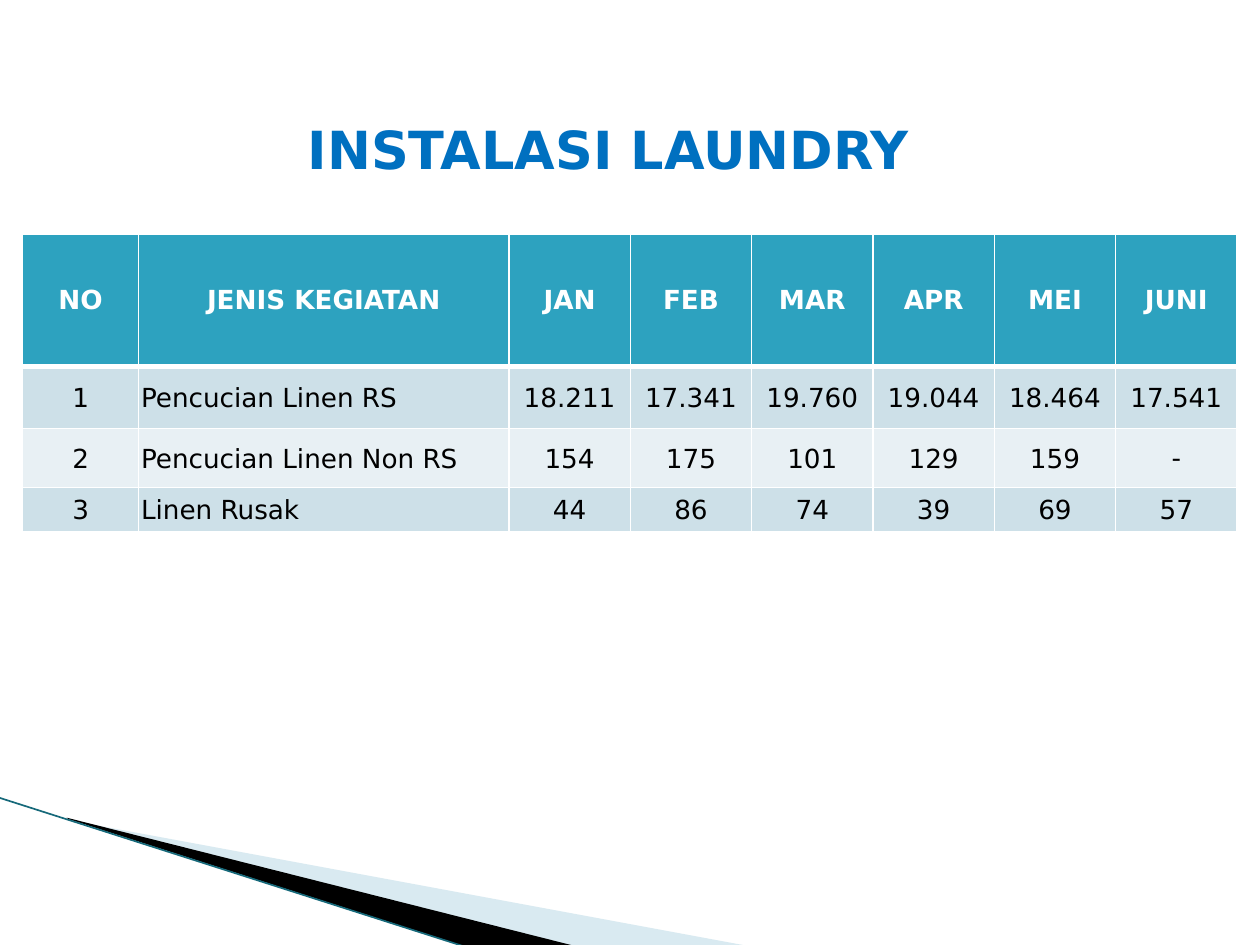
from lxml import etree
from pptx import Presentation
from pptx import util as u
from pptx.dml.color import RGBColor
from pptx.enum import shapes, text
from pptx.oxml import parse_xml
from pptx.oxml.ns import nsdecls, qn

FONT = "DejaVu Sans"
WHITE = RGBColor(0xFF, 0xFF, 0xFF)
BLACK = RGBColor(0, 0, 0)
BLUE = RGBColor(0x00, 0x70, 0xC0)
TEAL = RGBColor(0x2D, 0xA2, 0xBF)
DARK = RGBColor(0x16, 0x69, 0x7A)
PALE = RGBColor(0xA0, 0xCB, 0xDC)
ODD = RGBColor(0xCD, 0xE0, 0xE8)
EVEN = RGBColor(0xE8, 0xF0, 0xF4)


def style(para, size, color, bold, align):
    para.alignment = align
    font = para.font
    font.name, font.size, font.bold = FONT, u.Pt(size), bold
    font.color.rgb = color


def border(cell, side, width):
    cell._tc.get_or_add_tcPr().append(parse_xml(
        f'<a:{side} {nsdecls("a")} w="{u.Pt(width)}"><a:solidFill>'
        f'<a:srgbClr val="{WHITE}"/></a:solidFill></a:{side}>'))


deck = Presentation()
deck.slide_width, deck.slide_height = u.Inches(10), u.Inches(7.5)
slide = deck.slides.add_slide(deck.slide_layouts[6])

# Wedges in the lower left corner
wedges = [
    (PALE, [(0.55, 6.51), (5.95, 7.51), (4.56, 7.51), (0.55, 6.5)]),
    (BLACK, [(0.53, 6.49), (4.57, 7.51), (3.72, 7.52), (0.54, 6.5)]),
]
for color, points in wedges:
    start, *rest = [(u.Inches(x), u.Inches(y)) for x, y in points]
    path = slide.shapes.build_freeform(*start)
    path.add_line_segments(rest, close=True)
    wedge = path.convert_to_shape()
    wedge.shadow.inherit = False
    wedge.fill.solid()
    wedge.fill.fore_color.rgb = color
    wedge.line.fill.background()
    if color == PALE:
        tint = wedge._element.spPr.find(qn("a:solidFill"))[0]
        etree.SubElement(tint, qn("a:alpha")).set("val", "40000")

# Thin edge along the wedges
edge = slide.shapes.add_connector(
    shapes.MSO_CONNECTOR.STRAIGHT,
    u.Inches(-0.01), u.Inches(6.33), u.Inches(3.71), u.Inches(7.52))
edge.line.color.rgb = DARK
edge.line.width = u.Pt(0.95)
etree.SubElement(edge._element.spPr, qn("a:effectLst"))

# Table of monthly counts
rows = [
    ["NO", "JENIS KEGIATAN", "JAN", "FEB", "MAR", "APR", "MEI", "JUNI"],
    ["1", "Pencucian Linen RS", "18.211", "17.341", "19.760", "19.044",
     "18.464", "17.541"],
    ["2", "Pencucian Linen Non RS", "154", "175", "101", "129", "159", "-"],
    ["3", "Linen Rusak", "44", "86", "74", "39", "69", "57"],
]
total = 9.64
widths = [0.92, 2.94]
widths += [(total - sum(widths)) / 6] * 6
heights = [1.05, 0.49, 0.47, 0.35]
table = slide.shapes.add_table(
    len(rows), len(widths), u.Inches(0.18), u.Inches(1.86),
    u.Inches(total), u.Inches(sum(heights))).table
for col, width in zip(table.columns, widths):
    col.width = u.Inches(width)
for r, (row, height) in enumerate(zip(rows, heights)):
    table.rows[r].height = u.Inches(height)
    head = r == 0
    for c, word in enumerate(row):
        cell = table.cell(r, c)
        cell.text = word
        cell.vertical_anchor = text.MSO_ANCHOR.MIDDLE
        pad = 0.15 if head else 0.01 if c == 7 else 0.02
        cell.margin_left = cell.margin_right = u.Inches(pad)
        cell.margin_top = u.Inches(0.07 if head else pad)
        cell.margin_bottom = u.Inches(0.07 if head else 0)
        for side in ("lnL", "lnR", "lnT", "lnB"):
            thick = (head and side == "lnB") or (r == 1 and side == "lnT")
            border(cell, side, 3 if thick else 1)
        cell.fill.solid()
        cell.fill.fore_color.rgb = TEAL if head else ODD if r % 2 else EVEN
        left = c == 1 and not head
        style(cell.text_frame.paragraphs[0], 15, WHITE if head else BLACK,
              head, text.PP_ALIGN.LEFT if left else text.PP_ALIGN.CENTER)

# Title
box = slide.shapes.add_textbox(
    u.Inches(1.36), u.Inches(0.21), u.Inches(6.94), u.Inches(1.44))
frame = box.text_frame
frame.word_wrap = True
frame.vertical_anchor = text.MSO_ANCHOR.BOTTOM
frame.margin_bottom = u.Inches(0.22)
frame.text = "INSTALASI LAUNDRY"
style(frame.paragraphs[0], 30, BLUE, True, text.PP_ALIGN.CENTER)

deck.save("out.pptx")
